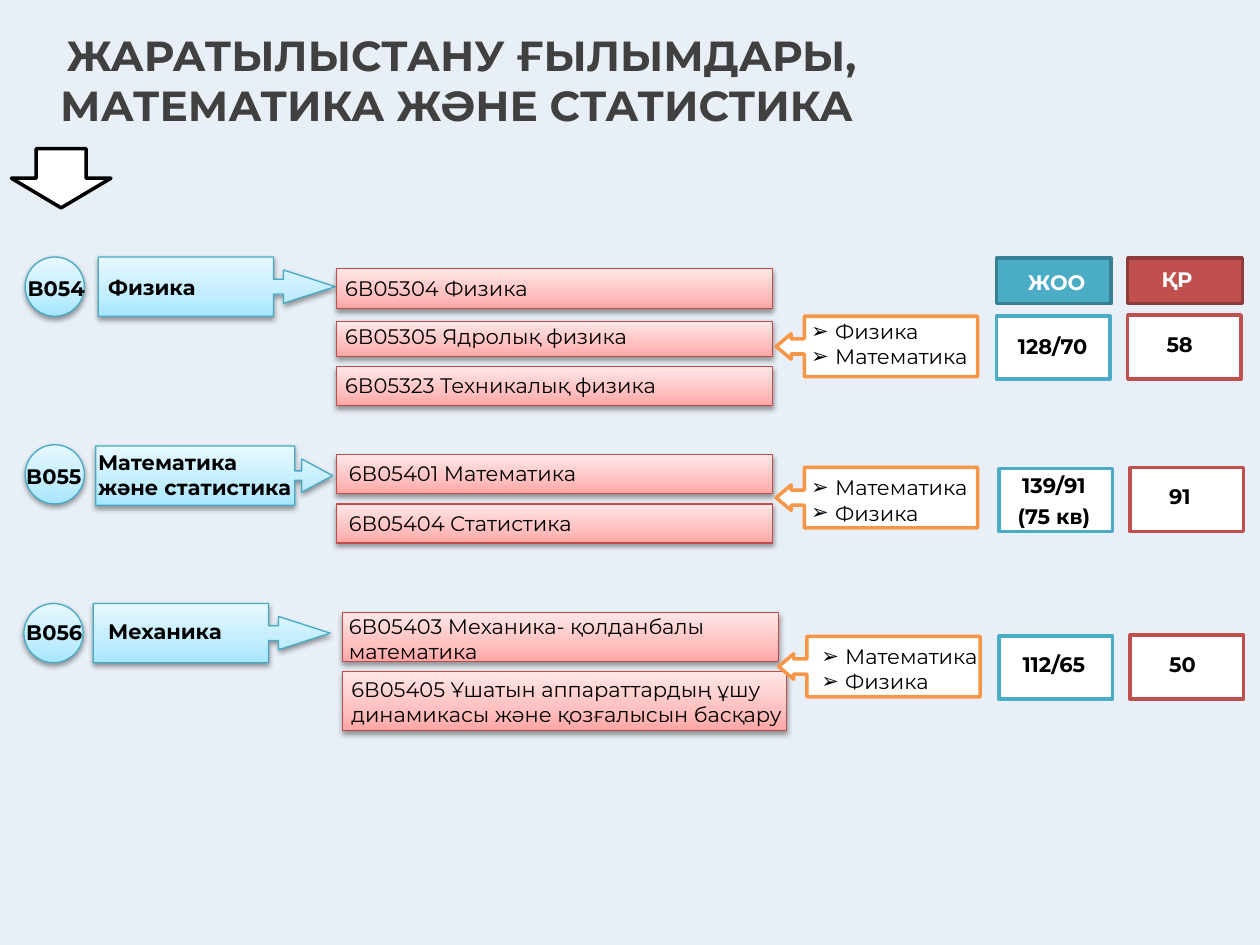
import pptx
import pptx.util
import pptx.dml.color
import pptx.enum.shapes
import pptx.enum.text
import pptx.oxml
import pptx.oxml.ns
import copy
import lxml.etree

RGB = pptx.dml.color.RGBColor
Kind = pptx.enum.shapes.MSO_SHAPE
Align = pptx.enum.text.PP_ALIGN
Pt = pptx.util.Pt
qn = pptx.oxml.ns.qn

BLACK = RGB(0x00, 0x00, 0x00)
WHITE = RGB(0xFF, 0xFF, 0xFF)
GREY = RGB(0x40, 0x40, 0x40)
PALE = RGB(0xDC, 0xE6, 0xF2)
TEAL = RGB(0x4B, 0xAC, 0xC6)
PINE = RGB(0x37, 0x7F, 0x92)
RED = RGB(0xC0, 0x50, 0x4D)
WINE = RGB(0x8E, 0x3B, 0x39)
AMBER = RGB(0xF7, 0x96, 0x46)
SKY = [RGB(0xA7, 0xE6, 0xFF), RGB(0xC1, 0xED, 0xFF), RGB(0xE7, 0xF8, 0xFF)]
ROSE = [RGB(0xFF, 0xA6, 0xA5), RGB(0xFF, 0xC0, 0xBF), RGB(0xFF, 0xE7, 0xE7)]
BLUE = RGB(0x46, 0xAA, 0xC5)
BRICK = RGB(0xBF, 0x4C, 0x48)

deck = pptx.Presentation()
deck.slide_width = pptx.util.Inches(10)
deck.slide_height = pptx.util.Inches(7.5)
slide = deck.slides.add_slide(deck.slide_layouts[6])
COL = deck.slide_width / 100
ROW = deck.slide_height / 75


def draw(kind, box, paint, edge, adj=()):
    x, y, w, h = box
    shape = slide.shapes.add_shape(
        kind, int(x * COL), int(y * ROW), int(w * COL), int(h * ROW))
    shape.shadow.inherit = False
    for i, share in enumerate(adj):
        shape.adjustments[i] = share
    if edge is None:
        shape.line.fill.background()
    else:
        shape.line.color.rgb = edge
        shape.line.width = Pt(0.75 if isinstance(paint, list) else 2)
    if not isinstance(paint, list):
        shape.fill.solid()
        shape.fill.fore_color.rgb = paint
        return shape
    shape.fill.gradient()
    shape.fill.gradient_angle = 90
    first = shape.fill.gradient_stops[0]._gs
    first.addnext(copy.deepcopy(first))
    for stop, tint, place in zip(shape.fill.gradient_stops, paint, (0, 0.35, 1)):
        stop.color.rgb = tint
        stop.position = place
    glow = shape._element.spPr.find(qn("a:effectLst"))
    cast = lxml.etree.SubElement(
        glow, qn("a:outerShdw"), blurRad=str(Pt(3.1)), dist=str(Pt(1.6)),
        dir="5400000", rotWithShape="0")
    tone = lxml.etree.SubElement(cast, qn("a:srgbClr"), val="000000")
    lxml.etree.SubElement(tone, qn("a:alpha"), val="38000")
    return shape


def write(lines, box, bold=False, color=BLACK, size=12, style=""):
    x, y, w, h = box
    frame = slide.shapes.add_textbox(
        int(x * COL), int(y * ROW), int(w * COL), int(h * ROW)).text_frame
    frame.word_wrap = True
    frame.text = "\n".join(lines)
    for para in frame.paragraphs:
        para.font.name = "Montserrat"
        para.font.size = Pt(size)
        para.font.bold = bold
        para.font.color.rgb = color
        props = para._p.get_or_add_pPr()
        if style == "quota":
            para.alignment = Align.CENTER
            para.line_spacing = 1.15
            para.space_after = Pt(1)
            props.set("marL", str(int(0.1 * COL)))
        if style == "list":
            props.set("marL", str(int(1.9 * COL)))
            props.set("indent", str(int(-1.9 * COL)))
            props.insert(0, props.makeelement(qn("a:buFont"), typeface="Arial"))
            props.insert(1, props.makeelement(qn("a:buChar"), char="➢"))
    return frame


back = draw(Kind.RECTANGLE, (0, 0, 100, 75), PALE, None)
tone = back.fill._xPr.find(qn("a:solidFill"))[0]
lxml.etree.SubElement(tone, qn("a:alpha"), val="63000")

title = write(["ЖАРАТЫЛЫСТАНУ ҒЫЛЫМДАРЫ,\vМАТЕМАТИКА ЖӘНЕ СТАТИСТИКА"],
              (0, 0.5, 100, 11.7), True, GREY, 24)
title.vertical_anchor = pptx.enum.text.MSO_ANCHOR.MIDDLE
props = title.paragraphs[0]._p.get_or_add_pPr()
props.set("marL", str(int(3.8 * COL)))
props.set("indent", str(int(0.5 * COL)))

draw(Kind.DOWN_ARROW, (0.9, 11.8, 7.9, 4.7), WHITE, BLACK)

wide = (0.25, 0.28, 0.87, 0.74)
groups = [
    ("B054", (2, 20.4), (1.2, 21.4), ["Физика"], (7.8, 20.4), (7.6, 21.3), wide),
    ("B055", (2, 35.3), (1.1, 36.3), ["Математика", "және статистика"],
     (7.6, 35.4), (6.8, 35.2), (0.16, 0.28, 0.52, 0.84)),
    ("B056", (1.9, 47.9), (1.1, 48.7), ["Механика"], (7.4, 47.9), (7.6, 48.6), wide),
]
for code, disc, mark, name, flag, label, adj in groups:
    draw(Kind.RIGHT_ARROW_CALLOUT, (*flag, 18.8, 4.7), SKY, BLUE, adj)
    write(name, (*label, 17.6, 5), True)
    draw(Kind.OVAL, (*disc, 4.7, 4.7), SKY, BLUE)
    write([code], (*mark, 7.1, 3), True)

bars = [
    (["6В05304 Физика"], (26.7, 21.3, 34.6, 3.2), (26.4, 21.4)),
    (["6В05305 Ядролық физика"], (26.7, 25.5, 34.6, 2.8), (26.4, 25.2)),
    (["6В05323 Техникалық физика"], (26.7, 29.1, 34.6, 3.1), (26.4, 29.1)),
    (["6В05401 Математика"], (26.7, 36.1, 34.6, 3.1), (26.7, 36.1)),
    (["6В05404 Статистика"], (26.7, 40, 34.6, 3.1), (26.7, 40)),
    (["6В05403 Механика- қолданбалы", "математика"],
     (27.2, 48.6, 34.6, 3.9), (26.7, 48.2)),
    (["6В05405 Ұшатын аппараттардың ұшу", "динамикасы және қозғалысын басқару"],
     (27.2, 53.3, 35.2, 4.7), (26.9, 53.2)),
]
for lines, box, spot in bars:
    draw(Kind.RECTANGLE, box, ROSE, BRICK)
    write(lines, (*spot, 37.8, 3 if len(lines) == 1 else 5))

exams = [
    (["Физика", "Математика"], (61.6, 25.1), (63.4, 24.8)),
    (["Математика", "Физика"], (61.6, 37.1), (63.4, 37.2)),
    (["Математика", "Физика"], (61.8, 50.5), (64.2, 50.6)),
]
for lines, spot, label in exams:
    draw(Kind.LEFT_ARROW_CALLOUT, (*spot, 16, 4.8), WHITE, AMBER,
         (0.25, 0.21, 0.25, 0.86))
    write(lines, (*label, 21.7, 5), style="list")

scores = [
    (["128/70"], "58", 79.1, 25.1, 79, 25.7),
    (["139/91", "(75 кв)"], "91", 79.3, 37.2, 79.1, 36.7),
    (["112/65"], "50", 79.3, 50.5, 79.1, 50.9),
]
for quota, score, left, top, x, y in scores:
    draw(Kind.RECTANGLE, (left, top, 9, 5), WHITE, TEAL)
    write(quota, (x, y, 9, 3.1 if len(quota) == 1 else 5.6), True, style="quota")
    draw(Kind.RECTANGLE, (left + 10.4, top - 0.1, 9, 5.1), WHITE, RED)
    write([score], (left + 12.5, top + 0.7, 7.9, 3), True)

heads = [
    ("ЖОО", 79.1, TEAL, PINE, (80.6, 20.9)),
    ("ҚР", 89.5, RED, WINE, (91.2, 20.7)),
]
for text, left, paint, edge, spot in heads:
    draw(Kind.RECTANGLE, (left, 20.5, 9.1, 3.6), paint, edge)
    write([text], (*spot, 7.5, 3), True, WHITE)

deck.save("out.pptx")
